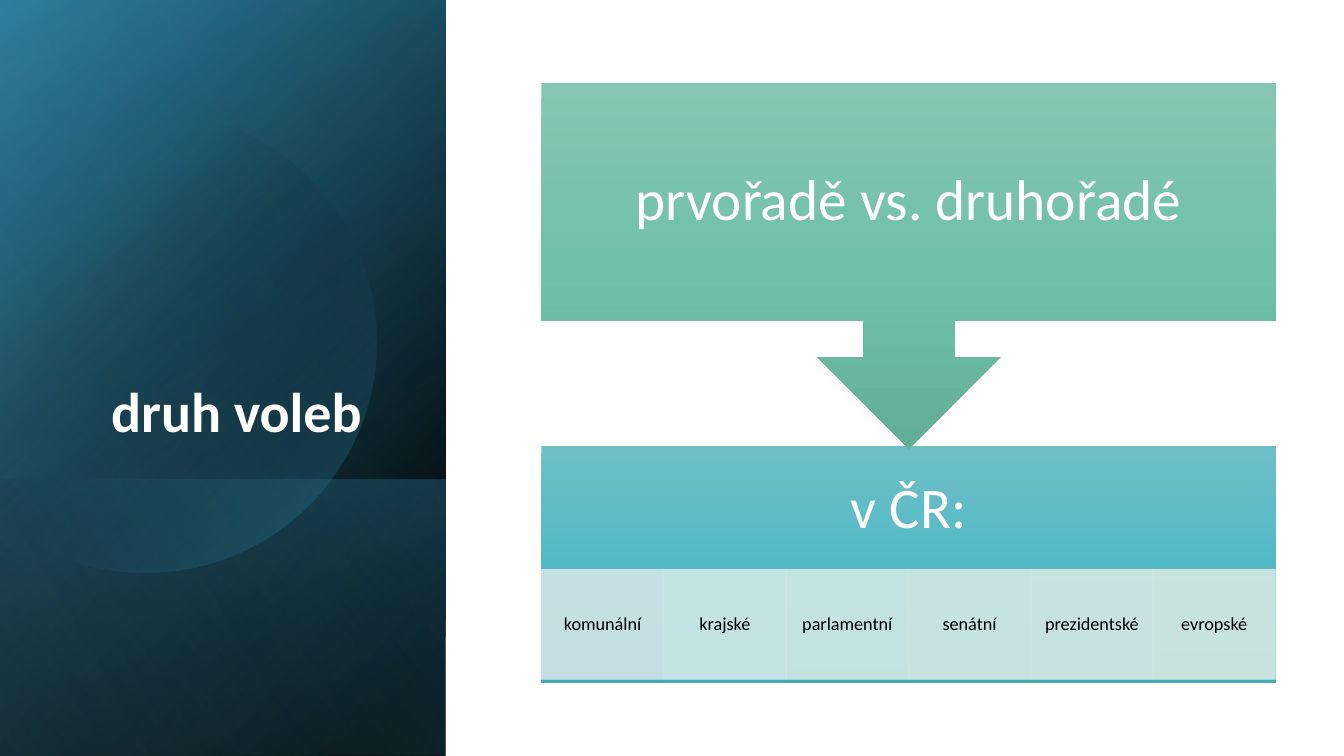
"""Builds the slide on kinds of elections."""
from math import cos, radians, sin, tan
from lxml.etree import SubElement as Sub
from pptx import Presentation
from pptx.dml.color import RGBColor as Rgb
from pptx.enum.shapes import MSO_SHAPE as Form
from pptx.enum.text import MSO_ANCHOR as Anchor, PP_ALIGN as Align
from pptx.oxml import parse_xml
from pptx.oxml.ns import nsdecls, qn
from pptx.util import Pt

SCALE = 9144
HUES = {
    "black": "000000", "white": "FFFFFF", "deep": "276F8B",
    "blue": "3494BA", "sky": "7FC1DB",
    "mint": "86C5B1", "green": "71C1A8", "moss": "61AF97",
    "mist": "6FBEC7", "aqua": "53BAC5", "teal": "44AAB5",
    "komunální": "D1E5E8", "krajské": "D2E8E8", "parlamentní": "D3E8E7",
    "senátní": "D4E8E5", "prezidentské": "D5E8E3", "evropské": "D6E8E1",
}


def px(num):
    return round(num * SCALE)


class Slide:
    """Holds the text style and the current slide."""

    def __init__(self, deck, face):
        self.face = face
        self.page = deck.slides.add_slide(deck.slide_layouts[6])
        self.shapes = self.page.shapes

    def color(self, hue, alpha):
        return (f'<a:srgbClr {nsdecls("a")} val="{HUES[hue]}">'
                f'<a:alpha val="{alpha * 1000}"/></a:srgbClr>')

    def blend(self, shape, stops, angle):
        shape.shadow.inherit = False
        shape.line.fill.background()
        shape.fill.gradient()
        marks = "".join(f'<a:gs pos="{pos * 1000}">{self.color(hue, alpha)}</a:gs>'
                        for pos, hue, alpha in stops)
        props = shape._element.spPr
        props.replace(props.find(qn("a:gradFill")), parse_xml(
            f'<a:gradFill {nsdecls("a")} rotWithShape="1"><a:gsLst>{marks}</a:gsLst>'
            f'<a:lin ang="{angle * 60000}" scaled="0"/></a:gradFill>'))

    def block(self, form, area, stops, angle):
        shape = self.shapes.add_shape(form, *map(px, area))
        self.blend(shape, stops, angle)
        return shape

    def panel(self, area, stops, angle):
        left, top, width, height = area
        shift = (width - height) / 2
        shape = self.block(Form.RECTANGLE, (left + shift, top - shift, height, width),
                           stops, angle)
        shape.rotation = 90
        shape._element.spPr.xfrm.set("flipH", "1")

    def disc(self, mid, radius, turns, stops, angle):
        def dot(turn, pull=0):
            east, south = cos(radians(turn)), sin(radians(turn))
            return (px(mid[0] + radius * (east - pull * south)),
                    px(mid[1] + radius * (south + pull * east)))

        dots = []
        for start, end in zip(turns, turns[1:]):
            pull = 4 / 3 * tan(radians(end - start) / 4)
            dots += [dot(start, pull), dot(end, -pull), dot(end)]
        path = self.shapes.build_freeform(*dot(turns[0]))
        path.add_line_segments(dots, close=True)
        shape = path.convert_to_shape()
        lines = list(shape._element.spPr.iter(qn("a:lnTo")))
        for trio in zip(*[iter(lines)] * 3):
            curve = Sub(trio[0].getparent(), qn("a:cubicBezTo"))
            trio[0].addprevious(curve)
            for line in trio:
                curve.append(line[0])
                line.getparent().remove(line)
        self.blend(shape, stops, angle)

    def cell(self, area, name):
        shape = self.shapes.add_shape(Form.RECTANGLE, *map(px, area))
        shape.shadow.inherit = False
        for fill in (shape.fill, shape.line.fill):
            fill.solid()
            fill.fore_color.rgb = Rgb.from_string(HUES[name])
            node = fill._xPr.find(qn("a:solidFill"))
            node.replace(node[0], parse_xml(self.color(name, 90)))
        shape.line.width = Pt(0.5)
        self.text(shape, name, 13, "black", (10, 2, 10, 2))

    def text(self, shape, words, size, hue, pads, anchor=Anchor.MIDDLE, bold=False):
        frame = shape.text_frame
        sides = ("margin_left", "margin_top", "margin_right", "margin_bottom")
        look = dict(zip(sides, map(px, pads)), word_wrap=True, vertical_anchor=anchor)
        para = frame.paragraphs[0]
        run = para.add_run()
        run.text = words
        for part, style in (
            (frame, look),
            (para, {"alignment": Align.CENTER, "line_spacing": 0.9}),
            (run.font, {"name": self.face, "size": Pt(size), "bold": bold}),
            (run.font.color, {"rgb": Rgb.from_string(HUES[hue])}),
        ):
            for key, value in style.items():
                setattr(part, key, value)

    def title(self, area, words):
        box = self.shapes.add_textbox(*map(px, area))
        self.text(box, words, 40, "white", (10, 5, 10, 5), Anchor.BOTTOM, True)


def main():
    deck = Presentation()
    deck.slide_width, deck.slide_height = px(1333), px(750)
    slide = Slide(deck, "Calibri")

    side = (0, 0, 442, 750)
    slide.panel(side, [(8, "black", 100), (100, "deep", 100)], 50)
    slide.panel(side, [(0, "black", 0), (99, "blue", 46)], 30)
    slide.panel((0, 476, 442, 274), [(2, "blue", 29), (100, "black", 30)], 130)
    slide.disc((144, 339), 229, (-134, -90, 0, 90, 134),
               [(29, "black", 0), (100, "blue", 43)], 46)
    slide.panel(side, [(0, "black", 0), (99, "sky", 11)], 120)
    slide.title((64, 184, 341, 262), "druh voleb")

    base = slide.block(Form.RECTANGLE, (537, 442, 729, 236),
                       [(0, "mist", 100), (50, "aqua", 100), (100, "teal", 100)], 90)
    slide.text(base, "v ČR:", 41, "white", (32, 32, 32, 140))
    kinds = ("komunální", "krajské", "parlamentní", "senátní", "prezidentské", "evropské")
    step = 728 / len(kinds)
    for spot, kind in enumerate(kinds):
        slide.cell((537 + spot * step, 565, step, 109), kind)
    arrow = slide.block(Form.DOWN_ARROW_CALLOUT, (537, 82, 729, 363),
                        [(0, "mint", 100), (50, "green", 100), (100, "moss", 100)], 90)
    slide.text(arrow, "prvořadě vs. druhořadé", 41, "white", (32, 32, 32, 32))
    deck.save("out.pptx")


if __name__ == "__main__":
    main()
